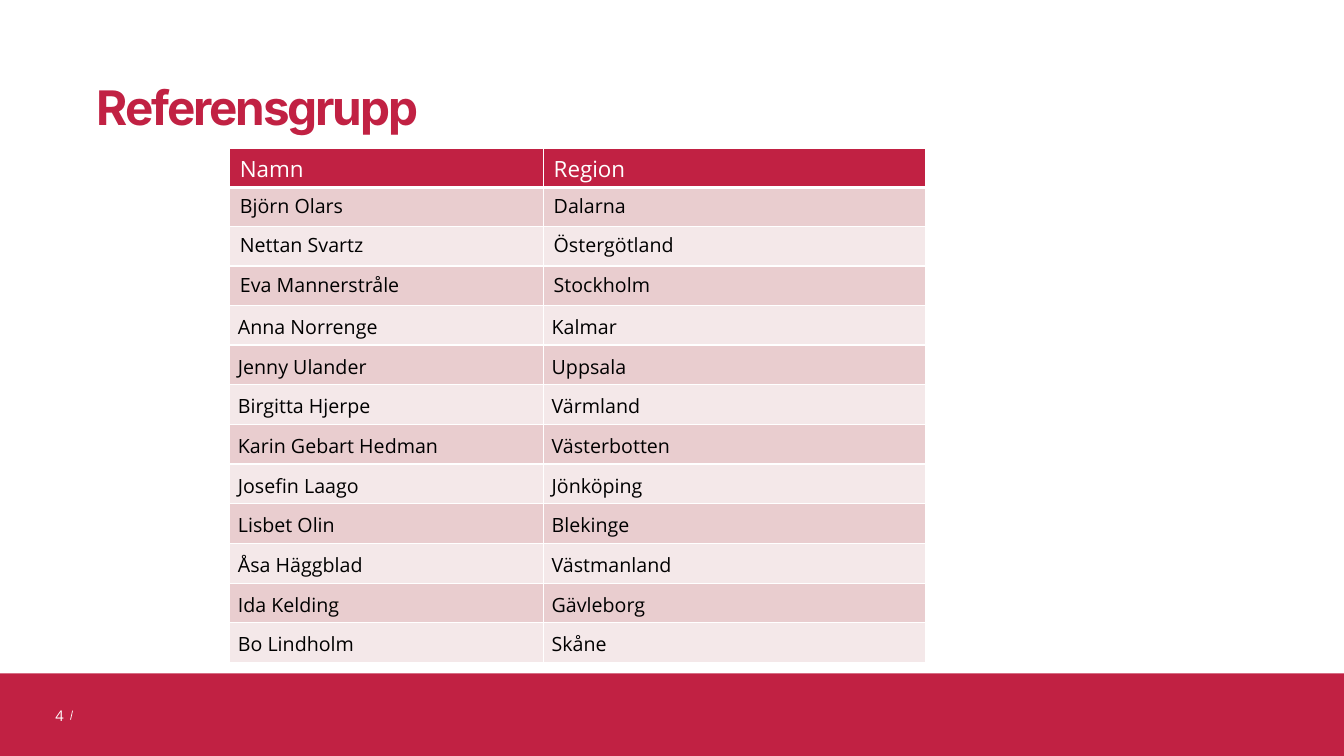
from dataclasses import dataclass

import pptx
import pptx.dml.color
import pptx.enum.shapes
import pptx.enum.text
import pptx.oxml
import pptx.oxml.ns
import pptx.util

Pt = pptx.util.Pt
Inches = pptx.util.Inches
ALIGN = pptx.enum.text.PP_ALIGN
ANCHOR = pptx.enum.text.MSO_ANCHOR


@dataclass(frozen=True)
class Theme:
    red: str = "C12143"
    white: str = "FFFFFF"
    black: str = "000000"
    bands: tuple = ("E9CDCF", "F4E8E9")
    heading_font: str = "Inter"
    body_font: str = "Open Sans"
    title_size: float = 34
    header_size: float = 16
    body_size: float = 14
    number_size: float = 10.5
    hairline: float = 0.5
    border: float = 1
    header_border: float = 3


MEMBERS = [
    ("Björn Olars", "Dalarna"),
    ("Nettan Svartz", "Östergötland"),
    ("Eva Mannerstråle", "Stockholm"),
    ("Anna Norrenge", "Kalmar"),
    ("Jenny Ulander", "Uppsala"),
    ("Birgitta Hjerpe", "Värmland"),
    ("Karin Gebart Hedman", "Västerbotten"),
    ("Josefin Laago", "Jönköping"),
    ("Lisbet Olin", "Blekinge"),
    ("Åsa Häggblad", "Västmanland"),
    ("Ida Kelding", "Gävleborg"),
    ("Bo Lindholm", "Skåne"),
]
DEFAULT_INSET_MEMBERS = 3
CELL_INSET = 0.08


def rgb(value):
    return pptx.dml.color.RGBColor.from_string(value)


class Deck:
    """Draws on one slide; lengths are percentages of its width and height."""

    def __init__(self, prs, theme):
        self.prs, self.theme = prs, theme
        self.slide = prs.slides.add_slide(prs.slide_layouts[6])
        self.shapes = self.slide.shapes

    def x(self, share):
        return round(self.prs.slide_width * share / 100)

    def y(self, share):
        return round(self.prs.slide_height * share / 100)

    def box(self, left, top, width, height):
        return self.x(left), self.y(top), self.x(width), self.y(height)

    def set_text(self, tf, text, size, color, font=None, bold=False):
        tf.text = text
        r = tf.paragraphs[0].runs[0]
        r.font.name = font or self.theme.body_font
        r.font.size = Pt(size)
        r.font.bold = bold
        r.font.color.rgb = rgb(color)
        return r

    def band(self, *area):
        sp = self.shapes.add_shape(
            pptx.enum.shapes.MSO_SHAPE.RECTANGLE, *self.box(*area))
        sp.shadow.inherit = False
        sp.fill.solid()
        sp.fill.fore_color.rgb = rgb(self.theme.red)
        sp.line.fill.background()

    def line(self, x1, y1, x2, y2):
        cxn = self.shapes.add_connector(
            pptx.enum.shapes.MSO_CONNECTOR.STRAIGHT,
            self.x(x1), self.y(y1), self.x(x2), self.y(y2))
        cxn.line.color.rgb = rgb(self.theme.white)
        cxn.line.width = Pt(self.theme.hairline)
        spPr = cxn._element.spPr
        spPr.append(spPr.makeelement(pptx.oxml.ns.qn("a:effectLst"), {}))

    def text_box(self, *area):
        tf = self.shapes.add_textbox(*self.box(*area)).text_frame
        tf.word_wrap = True
        return tf

    def title(self, text, *area):
        tf = self.text_box(*area)
        tf.vertical_anchor = ANCHOR.BOTTOM
        tf.margin_left = tf.margin_right = tf.margin_top = tf.margin_bottom = 0
        r = self.set_text(tf, text, self.theme.title_size, self.theme.red,
                          self.theme.heading_font, bold=True)
        r._r.get_or_add_rPr().set("spc", "-150")
        tf.paragraphs[0].line_spacing = 0.9

    def page_number(self, text, *area):
        tf = self.text_box(*area)
        tf.vertical_anchor = ANCHOR.MIDDLE
        self.set_text(tf, text, self.theme.number_size, self.theme.white)
        tf.paragraphs[0].alignment = ALIGN.RIGHT

    def cell_borders(self, cell, **widths):
        """Set white borders; widths are points by side: L, R, T and B."""
        tcPr = cell._tc.get_or_add_tcPr()
        for side, width in widths.items():
            tcPr.append(pptx.oxml.parse_xml(
                f'<a:ln{side} {pptx.oxml.ns.nsdecls("a")} w="{Pt(width)}">'
                f'<a:solidFill><a:srgbClr val="{self.theme.white}"/>'
                f'</a:solidFill></a:ln{side}>'))

    def table(self, header, members, left, top, col_widths, row_height):
        theme = self.theme
        rows = [header, *members]
        table = self.shapes.add_table(
            len(rows), len(header),
            *self.box(left, top, sum(col_widths), row_height * len(rows))).table
        table.first_row = table.horz_banding = False
        for column, width in zip(table.columns, col_widths):
            column.width = self.x(width)
        for i, row in enumerate(rows):
            table.rows[i].height = self.y(row_height)
            if i == 0:
                fill, size, color = theme.red, theme.header_size, theme.white
            else:
                fill = theme.bands[(i - 1) % 2]
                size, color = theme.body_size, theme.black
            top_width = theme.header_border if i == 1 else theme.border
            bottom_width = theme.header_border if i == 0 else theme.border
            for j, text in enumerate(row):
                cell = table.cell(i, j)
                self.cell_borders(cell, L=theme.border, R=theme.border,
                                  T=top_width, B=bottom_width)
                cell.fill.solid()
                cell.fill.fore_color.rgb = rgb(fill)
                if i > DEFAULT_INSET_MEMBERS:
                    cell.margin_left = cell.margin_right = Inches(CELL_INSET)
                    cell.margin_top = cell.margin_bottom = Inches(CELL_INSET)
                self.set_text(cell.text_frame, text, size, color)


def main():
    prs = pptx.Presentation()
    prs.slide_width, prs.slide_height = Inches(13.33), Inches(7.5)
    deck = Deck(prs, Theme())
    deck.band(0, 89.07, 100, 10.93)
    deck.line(5.4, 94, 5.25, 95.2)
    deck.title("Referensgrupp", 7.2, 1.2, 82.67, 16.8)
    deck.table(("Namn", "Region"), MEMBERS, left=17.1, top=19.6,
               col_widths=(23.35, 28.42), row_height=5.2)
    deck.page_number("4", 2.25, 92, 3.23, 5.33)
    prs.save("out.pptx")


if __name__ == "__main__":
    main()
